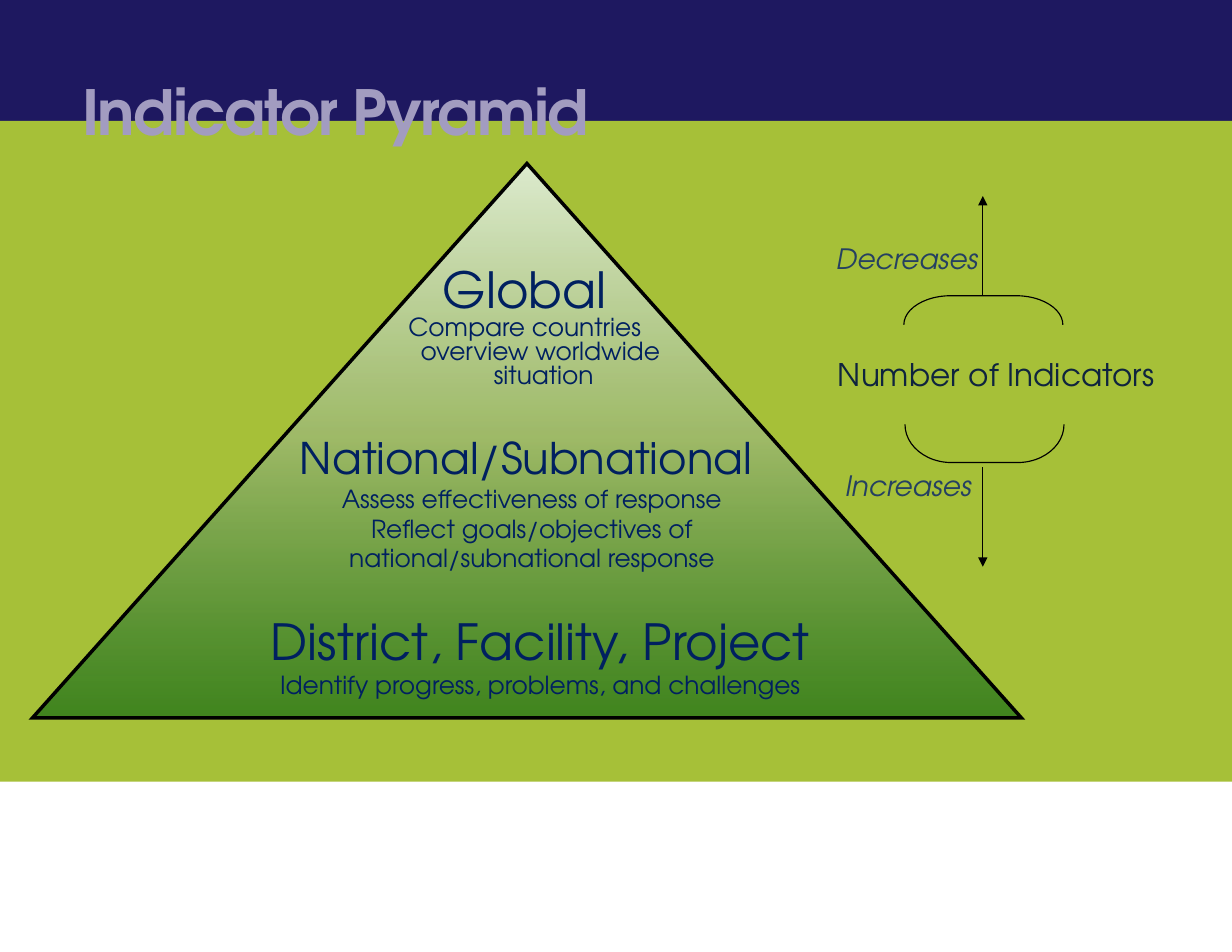
import lxml.etree
import pptx
import pptx.dml.color
import pptx.enum.shapes
import pptx.enum.text
import pptx.oxml
import pptx.oxml.ns
import pptx.util
from dataclasses import dataclass

qn = pptx.oxml.ns.qn
Pt = pptx.util.Pt
RGB = pptx.dml.color.RGBColor.from_string
SHAPE = pptx.enum.shapes.MSO_SHAPE
COLS, ROWS = 110, 85


@dataclass(frozen=True)
class Theme:
    font: str = "TeX Gyre Adventor"
    header: str = "1E1860"
    body: str = "A6C038"
    title: str = "A29CC0"
    level: str = "002060"
    count: str = "0F243E"
    trend: str = "254061"
    line: str = "000000"
    # position %, colour, opacity %
    gradient: tuple = ((0, "DDEBCF", 100), (50, "9CB86E", 85), (100, "156B13", 70))
    title_size: int = 40
    big: int = 32
    medium: int = 28
    count_size: int = 20
    trend_size: int = 18
    small: int = 16
    thick: float = 2.25
    thin: float = 0.75


class Deck:
    """Holds the theme and current slide; lengths are in grid columns and rows."""

    def __init__(self, theme):
        self.theme = theme
        self.prs = pptx.Presentation()
        self.prs.slide_width = pptx.util.Inches(11)
        self.prs.slide_height = pptx.util.Inches(8.5)
        self.s = self.prs.slides.add_slide(self.prs.slide_layouts[6])

    def grid(self, *lengths):
        """Turn alternating column and row counts into slide lengths."""
        units = (self.prs.slide_width / COLS, self.prs.slide_height / ROWS)
        return [round(n * units[i % 2]) for i, n in enumerate(lengths)]

    def shape(self, kind, box, fill=None, line=None, rotation=0, adjust=None):
        sp = self.s.shapes.add_shape(kind, *self.grid(*box))
        sp.shadow.inherit = False
        sp.rotation = rotation
        if adjust is not None:
            sp.adjustments[0] = adjust
        if fill:
            sp.fill.solid()
            sp.fill.fore_color.rgb = RGB(fill)
        else:
            sp.fill.background()
        if line:
            sp.line.color.rgb = RGB(self.theme.line)
            sp.line.width = Pt(line)
        else:
            sp.line.fill.background()
        return sp

    def pyramid(self, box):
        """Draw a sharp-cornered triangle that shades from top to bottom."""
        sp = self.shape(SHAPE.ISOSCELES_TRIANGLE, box, line=self.theme.thick)
        lxml.etree.SubElement(sp.line._get_or_add_ln(), qn("a:miter"), lim="800000")
        sp.fill.gradient()
        sp.fill.gradient_angle = 270
        stops = sp._element.spPr.find(qn("a:gradFill")).find(qn("a:gsLst"))
        for old in list(stops):
            stops.remove(old)
        for pos, color, alpha in self.theme.gradient:
            gs = lxml.etree.SubElement(stops, qn("a:gs"), pos=str(pos * 1000))
            rgb = lxml.etree.SubElement(gs, qn("a:srgbClr"), val=color)
            lxml.etree.SubElement(rgb, qn("a:alpha"), val=str(alpha * 1000))

    def arrow(self, start, end):
        cx = self.s.shapes.add_connector(
            pptx.enum.shapes.MSO_CONNECTOR.STRAIGHT, *self.grid(*start, *end))
        cx.line.color.rgb = RGB(self.theme.line)
        cx.line.width = Pt(self.theme.thin)
        lxml.etree.SubElement(cx.line._get_or_add_ln(), qn("a:tailEnd"), type="triangle")
        lxml.etree.SubElement(cx._element.spPr, qn("a:effectLst"))

    def text(self, box, paragraphs, color, left=0, hang=0, spacing=None,
             margin=True, track=0, **font):
        """Add centred (text, size) paragraphs; left and hang are in columns."""
        tf = self.s.shapes.add_textbox(*self.grid(*box)).text_frame
        tf.word_wrap = True
        if not margin:
            for side in ("left", "top", "right", "bottom"):
                setattr(tf, f"margin_{side}", 0)
        for i, (words, size) in enumerate(paragraphs):
            p = tf.add_paragraph() if i else tf.paragraphs[0]
            p.text = words
            p.alignment = pptx.enum.text.PP_ALIGN.CENTER
            p.line_spacing = spacing
            pPr = p._p.get_or_add_pPr()
            pPr.set("marL", str(self.grid(left)[0]))
            pPr.set("indent", str(self.grid(-hang)[0]))
            for br in p._p.findall(qn("a:br")):
                lxml.etree.SubElement(br, qn("a:rPr"), sz=str(size * 100))
            for r in p.runs:
                style = {"name": self.theme.font, "size": Pt(size), **font}
                for key, value in style.items():
                    setattr(r.font, key, value)
                r.font.color.rgb = RGB(color)
                if track:
                    r._r.get_or_add_rPr().set("spc", str(track * 100))


def main():
    t = Theme()
    d = Deck(t)
    d.shape(SHAPE.RECTANGLE, (0, 0, COLS, 13), t.header)
    d.shape(SHAPE.RECTANGLE, (0, 10.8, COLS, 59), t.body)
    d.text((-24.2, 4.2, 108.3, 27.3), [("Indicator Pyramid", t.title_size)], t.title,
           spacing=Pt(65), margin=False, track=-1, bold=True)

    d.pyramid((2.9, 14.6, 88.3, 49.5))
    d.text((11.2, 54, 69.1, 9.4),
           [("District, Facility, Project", t.big),
            ("Identify progress, problems, and challenges", t.small)],
           t.level, left=5)
    d.text((20.6, 38, 48.8, 16.5),
           [("National/Subnational ", t.medium),
            ("Assess effectiveness of response", t.small),
            ("Reflect goals/objectives of national/subnational response", t.small)],
           t.level, left=5)
    d.text((28.1, 23.6, 37.5, 12.1),
           [("Global", t.big),
            ("Compare countries\voverview worldwide \vsituation", t.small)],
           t.level, left=3.4, hang=3.4, spacing=0.8)

    d.text((73.3, 31.2, 31.3, 4.4), [("Number of Indicators", t.count_size)], t.count)
    for box, rotation, adjust in (((86.2, 32.5, 3.4, 14.2), 90, 1.22),
                                  ((86.5, 20.6, 2.6, 14.2), 270, 1.62)):
        d.shape(SHAPE.RIGHT_BRACKET, box, line=t.thin, rotation=rotation, adjust=adjust)
    for word, left, top, start, end in (("Decreases", 73.1, 21.1, 26.3, 17.5),
                                        ("Increases", 73.2, 41.3, 41.7, 50.6)):
        d.arrow((87.75, start), (87.75, end))
        d.text((left, top, 15.8, 4), [(word, t.trend_size)], t.trend, italic=True)
    d.prs.save("out.pptx")


if __name__ == "__main__":
    main()
